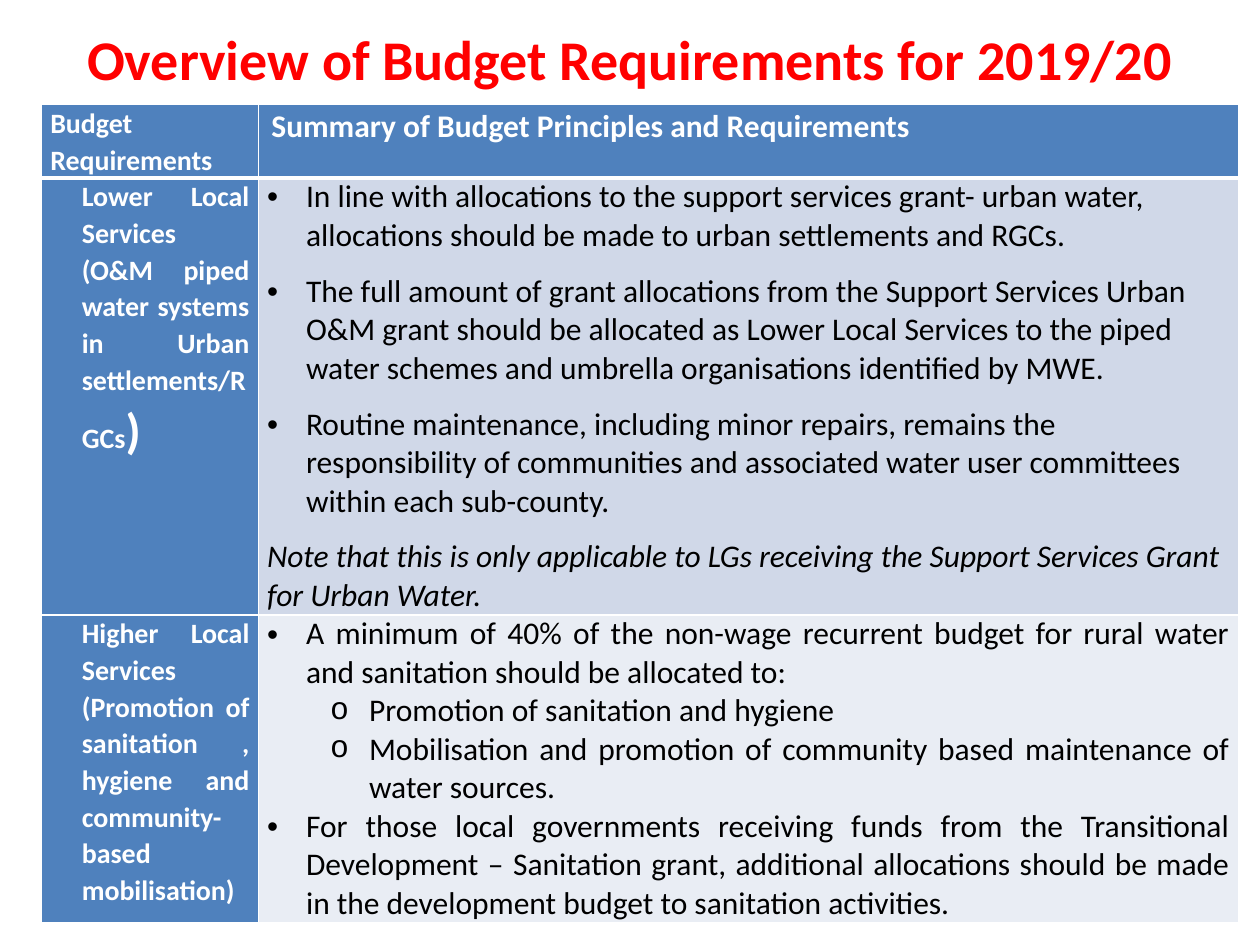
from dataclasses import dataclass

from lxml import etree
from pptx import Presentation
from pptx import util as u
from pptx.dml.color import RGBColor
from pptx.enum import text
from pptx.oxml.ns import qn

RED = RGBColor(0xFF, 0x00, 0x00)
WHITE = RGBColor(0xFF, 0xFF, 0xFF)
BLACK = RGBColor(0x00, 0x00, 0x00)
BLUE = RGBColor(0x4F, 0x81, 0xBD)
PALE_BLUE = RGBColor(0xD0, 0xD8, 0xE8)
PALER_BLUE = RGBColor(0xE9, 0xED, 0xF4)

LEFT, JUSTIFY = text.PP_ALIGN.LEFT, text.PP_ALIGN.JUSTIFY


@dataclass
class Para:
    """One paragraph: runs are (wording, size) pairs, indents are inches."""
    runs: list
    color: RGBColor = BLACK
    bold: bool = False
    italic: bool = False
    align: int = LEFT
    margin: float = 0
    bullet: str = ""
    level: int = 0
    spacing: float = 1.0
    after: float = 0


def label(*runs, **options):
    return Para(list(runs), WHITE, bold=True, spacing=1.07, **options)


def point(wording, **options):
    return Para([(wording, 18)], margin=0.31, bullet="•", **options)


def subpoint(wording):
    return Para([(wording, 18)], margin=0.81, bullet="o", level=1, align=JUSTIFY)


class SlideBuilder:
    """Holds the style and the slide; lengths are percent of the slide's size."""
    font = "Calibri"
    hanging = 0.31

    def __init__(self, deck):
        self.deck = deck
        self.slide = deck.slides.add_slide(deck.slide_layouts[5])

    def x(self, percent):
        return u.Emu(round(self.deck.slide_width * percent / 100))

    def y(self, percent):
        return u.Emu(round(self.deck.slide_height * percent / 100))

    def style(self, run, size, color, bold, italic=False):
        font = run.font
        font.name, font.size = self.font, u.Pt(size)
        font.bold, font.italic = bold, italic
        font.color.rgb = color

    def title(self, wording, left, top, width, height):
        title = self.slide.shapes.title
        title.left, title.top = self.x(left), self.y(top)
        title.width, title.height = self.x(width), self.y(height)
        frame = title.text_frame
        frame.text = wording
        frame.vertical_anchor = text.MSO_ANCHOR.MIDDLE
        frame.paragraphs[0].alignment = text.PP_ALIGN.CENTER
        self.style(frame.paragraphs[0].runs[0], 32, RED, True)

    def table(self, left, top, columns, rows, content, fills):
        table = self.slide.shapes.add_table(
            len(rows), len(columns), self.x(left), self.y(top),
            self.x(sum(columns)), self.y(sum(rows))).table
        for column, width in zip(table.columns, columns):
            column.width = self.x(width)
        for row, height in zip(table.rows, rows):
            row.height = self.y(height)
        for r, row in enumerate(content):
            for c, paragraphs in enumerate(row):
                self.cell(table.cell(r, c), paragraphs, fills[r][c])
                self.borders(table.cell(r, c), top=3 if r == 1 else 1,
                             bottom=3 if r == 0 else 1)

    def cell(self, cell, paragraphs, fill):
        cell.margin_left = cell.margin_right = u.Inches(0.07)
        cell.margin_top = cell.margin_bottom = 0
        cell.fill.solid()
        cell.fill.fore_color.rgb = fill
        frame = cell.text_frame
        for i, para in enumerate(paragraphs):
            self.paragraph(frame.add_paragraph() if i else frame.paragraphs[0], para)

    def paragraph(self, target, para):
        target.alignment, target.level = para.align, para.level
        target.line_spacing = para.spacing
        target.space_after = u.Pt(para.after)
        for wording, size in para.runs:
            run = target.add_run()
            run.text = wording
            self.style(run, size, para.color, para.bold, para.italic)
        properties = target._p.get_or_add_pPr()
        properties.set("marL", str(u.Inches(para.margin)))
        properties.set("indent", str(-u.Inches(self.hanging) if para.bullet else 0))
        if para.bullet:
            face = "Courier New" if para.bullet == "o" else "Arial"
            etree.SubElement(properties, qn("a:buFont"), typeface=face)
            etree.SubElement(properties, qn("a:buChar"), char=para.bullet)

    def borders(self, cell, top, bottom):
        properties = cell._tc.get_or_add_tcPr()
        sides = {"L": 1, "R": 1, "T": top, "B": bottom}
        for i, (side, width) in enumerate(sides.items()):
            line = etree.Element(qn(f"a:ln{side}"), w=str(u.Pt(width)))
            fill = etree.SubElement(line, qn("a:solidFill"))
            etree.SubElement(fill, qn("a:srgbClr"), val=str(WHITE))
            properties.insert(i, line)


# Table wording, row by row
HEADER = [
    [label(("Budget Requirements", 16))],
    [label(("\u00a0", 11), ("Summary of Budget Principles and Requirements", 18))],
]
LOWER_SERVICES = [
    [label(("Lower Local Services (O&M piped water systems in Urban "
            "settlements/RGCs", 16), (")", 28), align=JUSTIFY, margin=0.25)],
    [point("In line with allocations to the support services grant- urban water, "
           "allocations should be made to urban settlements and RGCs.", after=10),
     point("The full amount of grant allocations from the Support Services Urban "
           "O&M grant should be allocated as Lower Local Services to the piped "
           "water schemes and umbrella organisations identified by MWE.", after=10),
     point("Routine maintenance, including minor repairs, remains the "
           "responsibility of communities and associated water user committees "
           "within each sub-county.", after=10),
     Para([("Note that this is only applicable to LGs receiving the Support "
            "Services Grant for Urban Water.", 18)], italic=True)],
]
HIGHER_SERVICES = [
    [label(("Higher Local Services (Promotion of sanitation , hygiene and "
            "community-based mobilisation)", 16), align=JUSTIFY, margin=0.25)],
    [point("A minimum of 40% of the non-wage recurrent budget for rural water "
           "and sanitation should be allocated to: ", align=JUSTIFY),
     subpoint("Promotion of sanitation and hygiene"),
     subpoint("Mobilisation and promotion of community based maintenance of "
              "water sources."),
     point("For those local governments receiving funds from the Transitional "
           "Development – Sanitation grant, additional allocations should be made "
           "in the development budget to sanitation activities.", align=JUSTIFY)],
]


def main():
    deck = Presentation()
    deck.slide_width, deck.slide_height = u.Inches(10), u.Inches(7.5)
    builder = SlideBuilder(deck)

    # Heading
    builder.title("Overview of Budget Requirements for 2019/20", 5, 0, 90, 12.27)

    # Budget requirements table
    builder.table(
        3.3, 11.07, columns=[17.2, 77.8], rows=[7.73, 43.2, 32.27],
        content=[HEADER, LOWER_SERVICES, HIGHER_SERVICES],
        fills=[(BLUE, BLUE), (BLUE, PALE_BLUE), (BLUE, PALER_BLUE)])

    deck.save("out.pptx")


if __name__ == "__main__":
    main()
